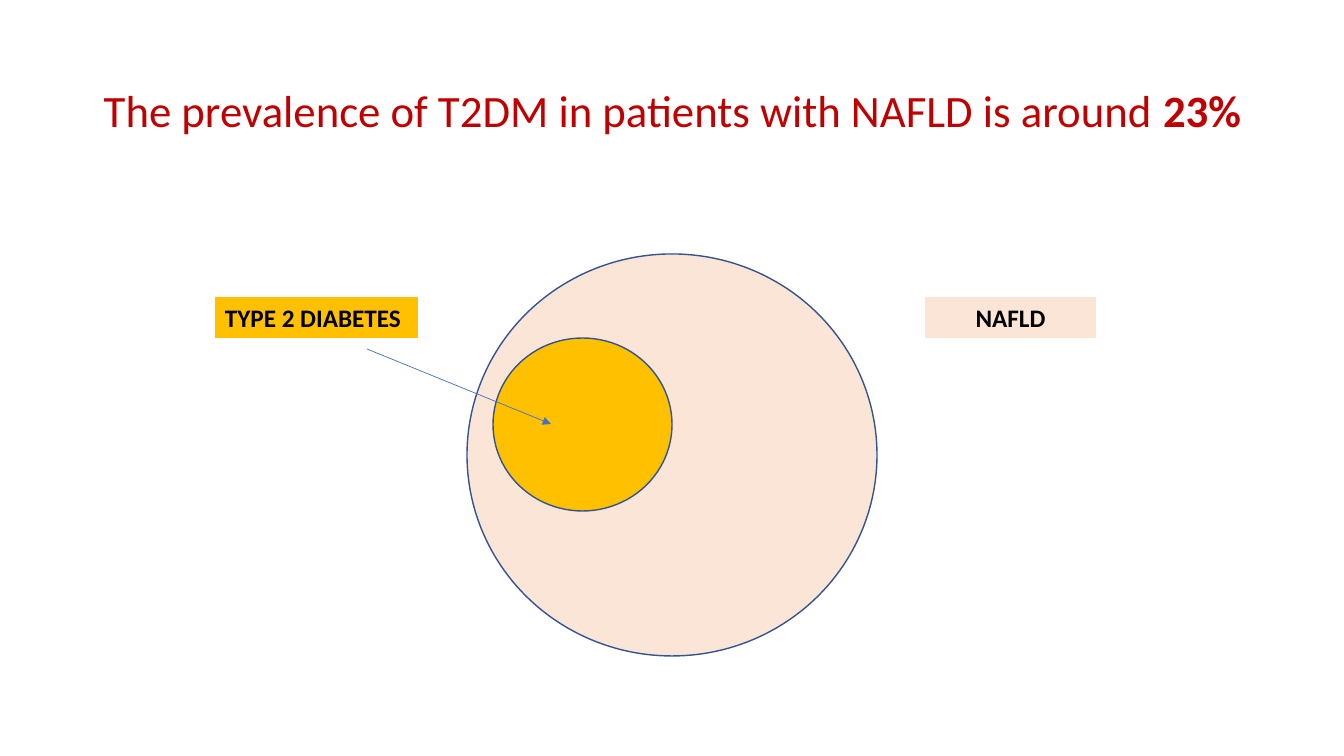
from lxml.etree import SubElement
from pptx import Presentation
from pptx.dml.color import RGBColor
from pptx.enum.shapes import MSO_CONNECTOR, MSO_SHAPE
from pptx.enum.text import MSO_ANCHOR, PP_ALIGN
from pptx.oxml.ns import qn
from pptx.util import Pt

PX = 914400 / 100.8
PEACH, GOLD = "FBE5D6", "FFC000"


def px(*sizes):
    """Turn pixel lengths into EMU."""
    return [round(size * PX) for size in sizes]


def paint(target, color):
    """Give a fill a solid colour, from a hex string."""
    target.solid()
    target.fore_color.rgb = RGBColor.from_string(color)


deck = Presentation()
deck.slide_width, deck.slide_height = px(1344, 756)
slide = deck.slides.add_slide(deck.slide_layouts[5])
shapes = slide.shapes

# Title
title = shapes.title
title.left, title.top, title.width, title.height = px(93, 40, 1159, 146)
title.text_frame.vertical_anchor = MSO_ANCHOR.MIDDLE
title.text_frame.word_wrap = True
line = title.text_frame.paragraphs[0]
line.alignment = PP_ALIGN.CENTER
line.line_spacing = 0.9
line.font.name = "Calibri"
line.font.size = Pt(32)
for text, bold in (
    ("The prevalence of T2DM in patients with NAFLD is around ", False),
    ("23%", True),
):
    run = line.add_run()
    run.text = text
    run.font.bold = bold
    paint(run.font.fill, "C00000")

# Nested circles
for box, color in (
    ((467, 254, 410, 402), PEACH),
    ((493, 338, 179, 173), GOLD),
):
    circle = shapes.add_shape(MSO_SHAPE.OVAL, *px(*box))
    circle.shadow.inherit = False
    paint(circle.fill, color)
    paint(circle.line.fill, "325491")
    circle.line.width = Pt(1)

# Labels
for text, left, width, color, align in (
    ("NAFLD", 925, 171, PEACH, PP_ALIGN.CENTER),
    ("TYPE 2 DIABETES", 215, 203, GOLD, PP_ALIGN.LEFT),
):
    label = shapes.add_textbox(*px(left, 297, width, 41))
    paint(label.fill, color)
    label.text_frame.word_wrap = True
    line = label.text_frame.paragraphs[0]
    line.text = text
    line.alignment = align
    line.font.name = "Calibri"
    line.font.size = Pt(18)
    line.font.bold = True
    paint(line.font.fill, "000000")

# Arrow from the diabetes label to the inner circle
arrow = shapes.add_connector(MSO_CONNECTOR.STRAIGHT, *px(367, 349, 551, 424))
paint(arrow.line.fill, "4472C4")
arrow.line.width = Pt(0.5)
SubElement(arrow.line._get_or_add_ln(), qn("a:tailEnd"), type="triangle")
SubElement(arrow._element.spPr, qn("a:effectLst"))

deck.save("out.pptx")
